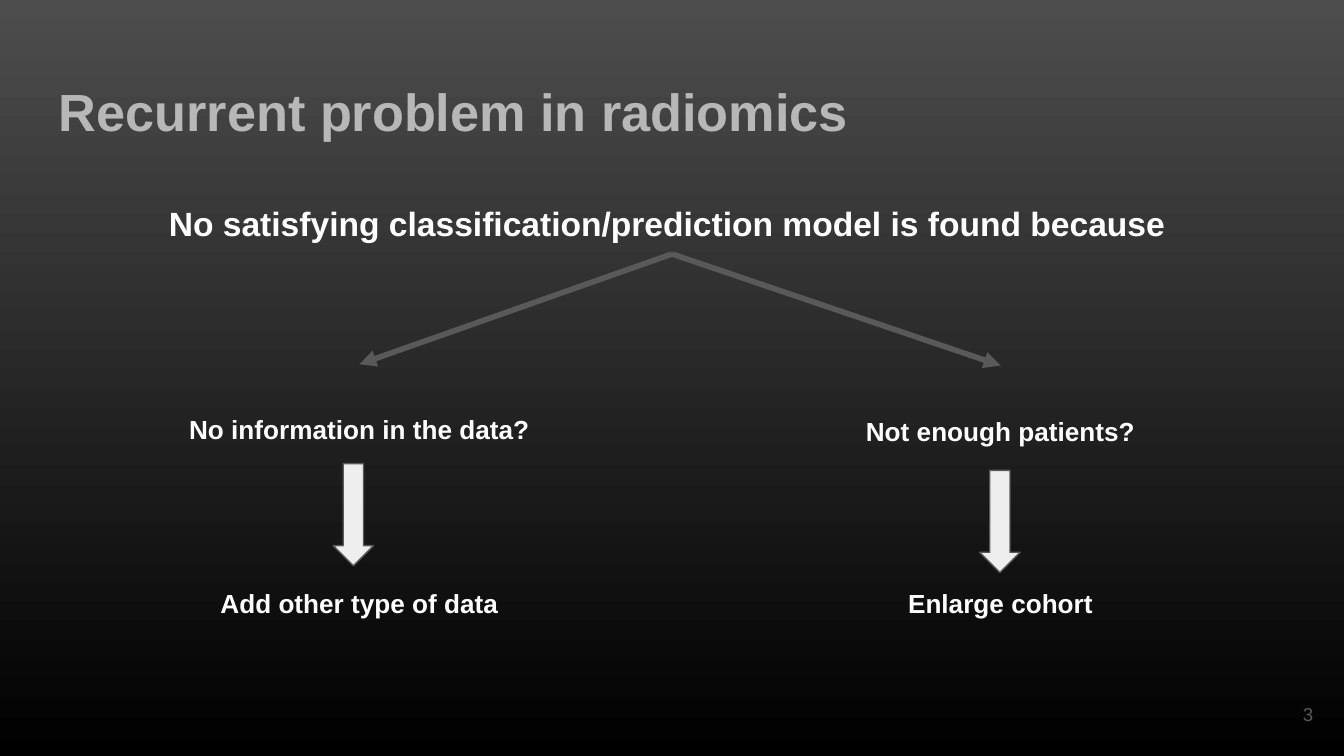
from dataclasses import dataclass

from lxml.etree import SubElement
from pptx import Presentation
from pptx.dml.color import RGBColor
from pptx.enum.shapes import MSO_CONNECTOR, MSO_SHAPE
from pptx.enum.text import MSO_ANCHOR, PP_ALIGN
from pptx.oxml.ns import qn
from pptx.util import Inches, Pt


@dataclass(frozen=True)
class Theme:
    font: str = "Arial"
    background: tuple = ("4D4D4D", "000000")
    title: str = "B7B7B7"
    text: str = "FFFFFF"
    grey: str = "595959"
    arrow: str = "EEEEEE"
    title_size: int = 28
    body_size: int = 18
    label_size: int = 14
    number_size: int = 10


class Deck:
    """Holds the theme and the current slide."""

    def __init__(self, prs, theme):
        self.theme = theme
        self.s = prs.slides.add_slide(prs.slide_layouts[6])

    def background(self):
        fill = self.s.background.fill
        fill.gradient()
        fill.gradient_angle = 270  # counter-clockwise: top to bottom
        for stop, color in zip(fill.gradient_stops, self.theme.background):
            stop.color.rgb = RGBColor.from_string(color)

    def text(self, text, box, size, color, bold=True, align=PP_ALIGN.CENTER,
             anchor=MSO_ANCHOR.MIDDLE, spacing=None):
        sp = self.s.shapes.add_textbox(*map(Inches, box))
        tf = sp.text_frame
        tf.word_wrap = True
        tf.vertical_anchor = anchor
        tf.margin_left = tf.margin_right = Inches(0.1)
        tf.margin_top = tf.margin_bottom = Inches(0.1)
        tf.text = text
        p = tf.paragraphs[0]
        p.alignment = align
        p.line_spacing = spacing
        font = p.runs[0].font
        font.name = self.theme.font
        font.size = Pt(size)
        font.bold = bold
        font.color.rgb = RGBColor.from_string(color)
        return sp

    def label(self, text, box):
        return self.text(text, box, self.theme.label_size, self.theme.text)

    def branch(self, start, end):
        """Arrow from the bottom of one box to the top of another."""
        line = self.s.shapes.add_connector(MSO_CONNECTOR.STRAIGHT, 0, 0, 0, 0)
        line.begin_connect(start, 2)
        line.end_connect(end, 0)
        line.line.color.rgb = RGBColor.from_string(self.theme.grey)
        line.line.width = Pt(3)
        ln = line._element.spPr.find(qn("a:ln"))
        SubElement(ln, qn("a:tailEnd"), type="triangle")
        SubElement(line._element.spPr, qn("a:effectLst"))

    def down_arrow(self, box):
        sp = self.s.shapes.add_shape(MSO_SHAPE.DOWN_ARROW, *map(Inches, box))
        sp.shadow.inherit = False
        sp.fill.solid()
        sp.fill.fore_color.rgb = RGBColor.from_string(self.theme.arrow)
        sp.line.color.rgb = RGBColor.from_string(self.theme.grey)
        sp.line.width = Pt(0.75)


def main():
    prs = Presentation()
    prs.slide_width = Inches(10)
    prs.slide_height = Inches(10 * 9 / 16)
    theme = Theme()
    deck = Deck(prs, theme)

    deck.background()
    deck.text("Recurrent problem in radiomics", (0.34, 0.49, 9.32, 0.63),
              theme.title_size, theme.title, align=PP_ALIGN.LEFT,
              anchor=MSO_ANCHOR.TOP)
    problem = deck.text(
        "No satisfying classification/prediction model is found because ",
        (0.34, 1.26, 9.32, 0.63), theme.body_size, theme.text,
        anchor=MSO_ANCHOR.TOP, spacing=1.5)
    deck.text("3", (9.27, 5.1, 0.6, 0.43), theme.number_size, theme.grey,
              bold=False, align=PP_ALIGN.RIGHT)

    # cause, its left and top, remedy, its left, arrow left and top
    branches = [
        ("No information in the data?", 0.86, 2.71,
         "Add other type of data", 1.39, 2.48, 3.45),
        ("Not enough patients?", 5.63, 2.72,
         "Enlarge cohort", 6.16, 7.29, 3.5),
    ]
    for cause, x, y, remedy, remedy_x, arrow_x, arrow_y in branches:
        cause_box = deck.label(cause, (x, y, 3.63, 0.97))
        deck.branch(problem, cause_box)
        deck.label(remedy, (remedy_x, 4.15, 2.57, 0.68))
        deck.down_arrow((arrow_x, arrow_y, 0.3, 0.76))

    prs.save("out.pptx")


if __name__ == "__main__":
    main()
